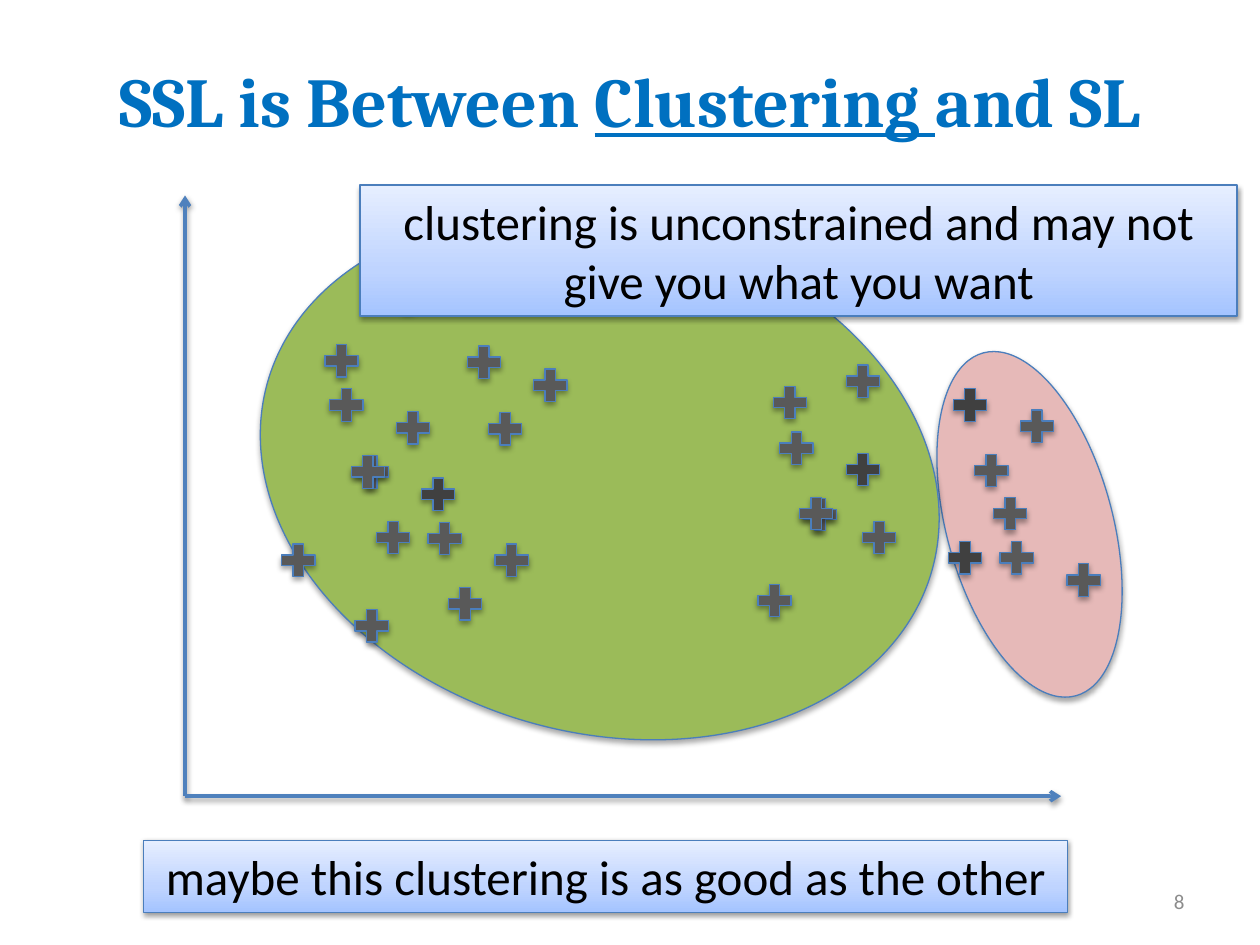
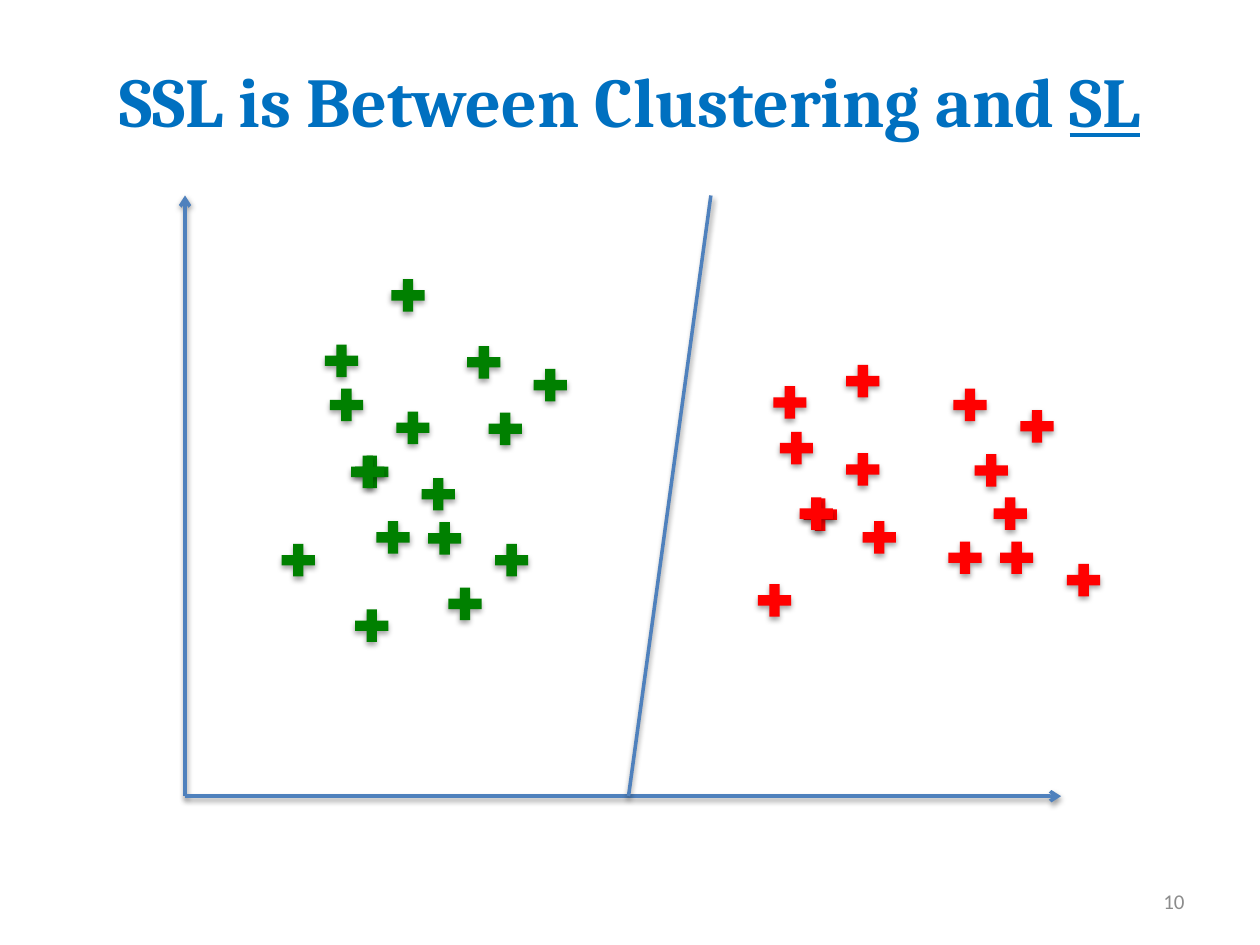
from lxml.etree import SubElement
from pptx import Presentation
from pptx.dml.color import RGBColor
from pptx.enum.shapes import MSO_CONNECTOR as Link, MSO_SHAPE as Shape
from pptx.enum.text import MSO_ANCHOR as Anchor, MSO_AUTO_SIZE as Fit, PP_ALIGN as Align
from pptx.oxml.ns import qn
from pptx.util import Cm, Pt

BLACK = RGBColor(0x00, 0x00, 0x00)
TITLE = RGBColor(0x00, 0x70, 0xC0)
AXIS = RGBColor(0x4F, 0x81, 0xBD)
EDGE = RGBColor(0x4B, 0x7E, 0xBC)
GREY = RGBColor(0x59, 0x59, 0x59)
DARK = RGBColor(0x40, 0x40, 0x40)
GREEN = RGBColor(0x00, 0x80, 0x00)
RED = RGBColor(0xFF, 0x00, 0x00)
LEAF = RGBColor(0x9B, 0xBB, 0x59)
ROSE = RGBColor(0xE6, 0xB9, 0xB8)
FOOT = RGBColor(0x8C, 0x8C, 0x8C)
FADE = [(0, RGBColor(0xA4, 0xC4, 0xFF)), (35, RGBColor(0xBF, 0xD4, 0xFF)),
        (100, RGBColor(0xE6, 0xEE, 0xFF))]

SOFT = (35, 1.8)
FIRM = (38, 1.6)

LEFT = [
    (8.51, 10.41), (9.86, 10.85), (8.92, 11.73), (7.04, 12.17),
    (7.04, 9.07), (8.38, 9.52), (7.47, 10.39), (5.56, 10.85),
    (9.3, 6.86), (10.64, 7.32), (9.73, 8.2), (6.53, 7.72),
    (7.87, 8.18), (6.96, 9.07), (6.43, 6.83), (7.77, 5.51),
]
RIGHT = [
    (20.04, 10.8), (21.39, 11.25), (17.27, 10.39), (16.08, 9.93),
    (19.91, 9.91), (19, 10.8), (15.16, 11.66), (19.1, 7.72),
    (20.45, 8.15), (19.53, 9.04), (15.6, 8.59), (16.94, 9.02),
    (16, 9.91), (15.47, 7.67), (16.94, 7.24),
]
SHADED = {(8.38, 9.52), (7.77, 5.51), (19, 10.8), (19.1, 7.72), (16.94, 9.02)}
PLUS = (0.91, 0.89)

ORIGIN = (3.73, 16.05)
TOP = 3.94
ENDS = [(ORIGIN[0], TOP), (21.39, ORIGIN[1])]
SPLIT = [(14.33, TOP), (12.67, ORIGIN[1])]

SLIDES = [
    {
        "title": [("SSL is Between ", False), ("Clustering ", True), ("and SL", False)],
        "number": "8",
        "ovals": [((19.08, 6.99, 3.35, 7.16), 344.9, ROSE),
                  ((5.13, 4.45, 13.92, 10.31), 15.8, LEAF)],
        "colors": (GREY, GREY),
        "plain": True,
        "notes": [
            ((7.26, 3.73, 17.68, 2.64),
             "clustering is unconstrained and may not give you what you want"),
            ((2.9, 16.94, 18.62, 1.45), "maybe this clustering is as good as the other"),
        ],
        "lines": [],
    },
    {
        "title": [("SSL is Between Clustering and ", False), ("SL", True)],
        "number": "10",
        "ovals": [],
        "colors": (GREEN, RED),
        "plain": False,
        "notes": [],
        "lines": [SPLIT],
    },
]


def cast(item, look):
    alpha, gap = look
    props = item._element.spPr
    effects = props.find(qn("a:effectLst"))
    if effects is None:
        effects = SubElement(props, qn("a:effectLst"))
    shade = SubElement(effects, qn("a:outerShdw"), blurRad=str(Pt(3.1)),
                       dist=str(Pt(gap)), dir="5400000", rotWithShape="0")
    tone = SubElement(shade, qn("a:srgbClr"), val=str(BLACK))
    SubElement(tone, qn("a:alpha"), val=str(alpha * 1000))


def draw(slide, kind, box, fill, edge=True, look=SOFT):
    item = slide.shapes.add_shape(kind, *map(Cm, box))
    if fill is FADE:
        item.fill.gradient()
        item.fill.gradient_angle = 90
        stops = item._element.spPr.find(".//" + qn("a:gsLst"))
        for stop in list(stops):
            stops.remove(stop)
        for place, color in FADE:
            stop = SubElement(stops, qn("a:gs"), pos=str(place * 1000))
            SubElement(stop, qn("a:srgbClr"), val=str(color))
    else:
        item.fill.solid()
        item.fill.fore_color.rgb = fill
    if edge:
        item.line.color.rgb = EDGE
        item.line.width = Pt(0.75)
    else:
        item.line.fill.background()
    item.shadow.inherit = False
    cast(item, look)
    return item


def rule(slide, start, end, arrow=False):
    item = slide.shapes.add_connector(Link.STRAIGHT, *map(Cm, start + end))
    item.line.color.rgb = AXIS
    item.line.width = Pt(2)
    if arrow:
        SubElement(item.line._get_or_add_ln(), qn("a:tailEnd"), type="arrow")
    cast(item, FIRM)


def write(item, parts, size, font, color, align, bold=False):
    frame = item.text_frame
    frame.word_wrap = True
    para = frame.paragraphs[0]
    para.alignment = align
    for text, under in parts:
        run = para.add_run()
        run.text = text
        run.font.size = Pt(size)
        run.font.name = font
        run.font.bold = bold
        run.font.underline = under
        run.font.color.rgb = color
    return frame


def label(slide, box, *style, **extra):
    item = slide.shapes.add_textbox(*map(Cm, box))
    write(item, *style, **extra).vertical_anchor = Anchor.MIDDLE


def build(deck, page):
    slide = deck.slides.add_slide(deck.slide_layouts[6])
    for box, turn, color in page["ovals"]:
        draw(slide, Shape.OVAL, box, color).rotation = turn
    label(slide, (1.27, 0.76, 22.86, 2.51), page["title"], 40, "Cambria",
          TITLE, Align.CENTER, bold=True)
    for end in ENDS:
        rule(slide, ORIGIN, end, arrow=True)
    for group, color in zip((LEFT, RIGHT), page["colors"]):
        for spot in group:
            fill = DARK if page["plain"] and spot in SHADED else color
            draw(slide, Shape.MATH_PLUS, spot + PLUS, fill, page["plain"])
    label(slide, (18.21, 17.65, 5.92, 1.02), [(page["number"], False)], 12,
          "Calibri", FOOT, Align.RIGHT)
    for box, text in page["notes"]:
        item = draw(slide, Shape.RECTANGLE, box, FADE, look=FIRM)
        frame = write(item, [(text, False)], 28, "Calibri", BLACK, Align.CENTER)
        frame.vertical_anchor = Anchor.TOP
        frame.auto_size = Fit.SHAPE_TO_FIT_TEXT
    for start, end in page["lines"]:
        rule(slide, start, end)


def main():
    deck = Presentation()
    deck.slide_width, deck.slide_height = Cm(25.4), Cm(19.05)
    for page in SLIDES:
        build(deck, page)
    deck.save("out.pptx")


if __name__ == "__main__":
    main()
